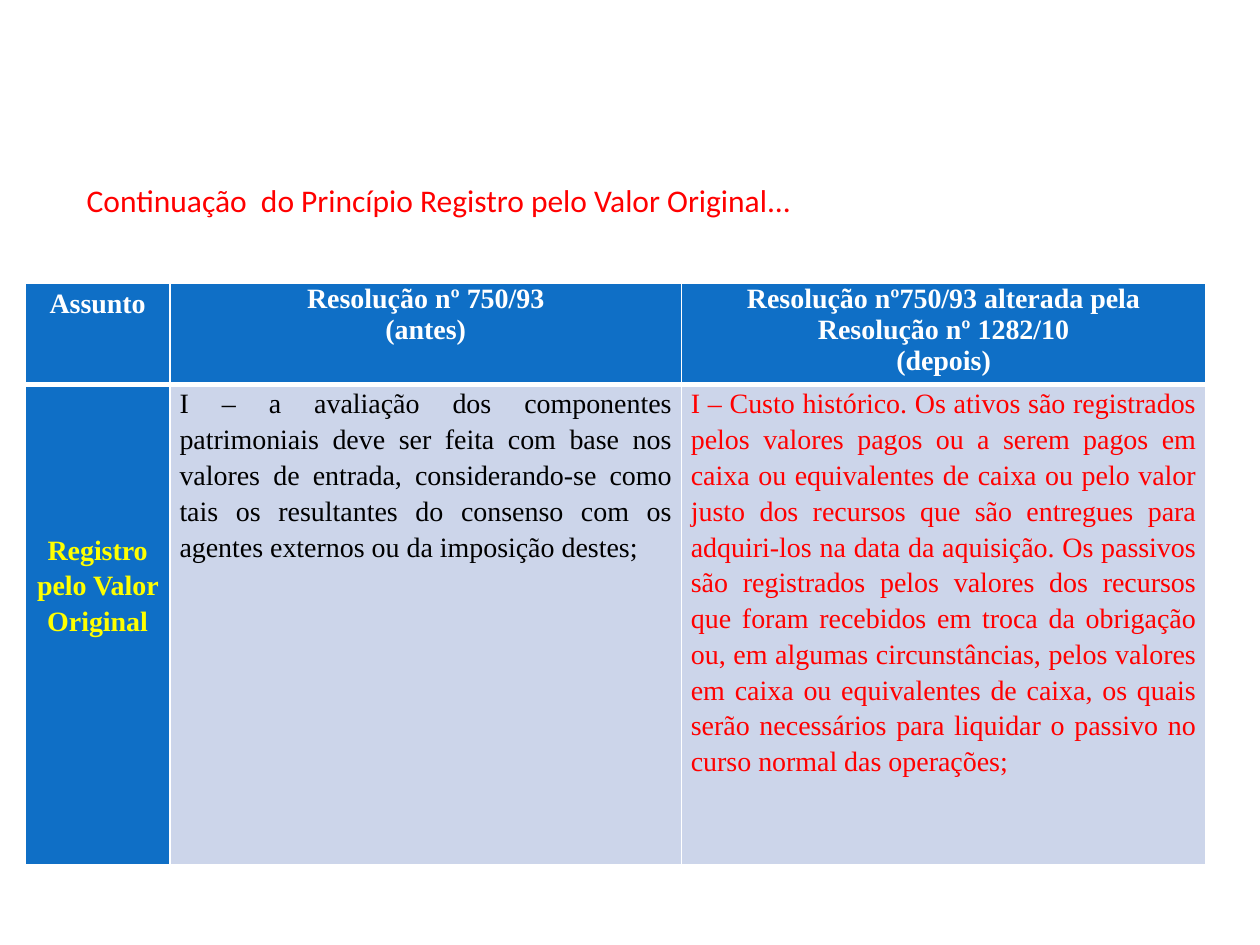
from dataclasses import dataclass

from lxml import etree
from pptx import Presentation
from pptx.dml.color import RGBColor
from pptx.enum.text import MSO_ANCHOR, MSO_AUTO_SIZE, PP_ALIGN
from pptx.oxml.ns import qn
from pptx.util import Pt

CENTER = PP_ALIGN.CENTER
JUSTIFY = PP_ALIGN.JUSTIFY
TOP = MSO_ANCHOR.TOP
MIDDLE = MSO_ANCHOR.MIDDLE
FIT_SHAPE = MSO_AUTO_SIZE.SHAPE_TO_FIT_TEXT


@dataclass(frozen=True)
class Theme:
    white: str = "FFFFFF"
    black: str = "000000"
    red: str = "FF0000"
    yellow: str = "FFFF00"
    blue: str = "0F6FC6"
    pale_blue: str = "CCD5EA"
    title_font: str = "Calibri"
    table_font: str = "Times New Roman"
    title_size: float = 18
    table_size: float = 16
    thin_line: float = 1
    thick_line: float = 3


THEME = Theme()


@dataclass(frozen=True)
class CellContent:
    lines: tuple[str, ...]
    color: str = THEME.white
    fill: str = THEME.blue
    bold: bool = True
    alignment: PP_ALIGN = CENTER
    line_spacing: float = 1.15
    anchor: MSO_ANCHOR = TOP
    bottom_margin: float = 0


COLUMN_WIDTHS = (82.8, 292.2, 299.6)
ROW_HEIGHTS = (57.6, 274.4)
TABLE_ROWS = (
    (
        CellContent(("Assunto",)),
        CellContent(("Resolução nº 750/93", "(antes)"), line_spacing=1),
        CellContent(
            ("Resolução nº750/93 alterada pela", "Resolução nº 1282/10", "(depois)"),
            line_spacing=1,
        ),
    ),
    (
        CellContent(
            ("Registro pelo Valor Original",),
            color=THEME.yellow, anchor=MIDDLE, bottom_margin=46,
        ),
        CellContent(
            ("I – a avaliação dos componentes patrimoniais deve ser feita com base nos "
             "valores de entrada, considerando-se como tais os resultantes do consenso "
             "com os agentes externos ou da imposição destes;",),
            color=THEME.black, fill=THEME.pale_blue, bold=False, alignment=JUSTIFY,
        ),
        CellContent(
            ("I – Custo histórico. Os ativos são registrados pelos valores pagos ou a "
             "serem pagos em caixa ou equivalentes de caixa ou pelo valor justo dos "
             "recursos que são entregues para adquiri-los na data da aquisição. Os "
             "passivos são registrados pelos valores dos recursos que foram recebidos em "
             "troca da obrigação ou, em algumas circunstâncias, pelos valores em caixa ou "
             "equivalentes de caixa, os quais serão necessários para liquidar o passivo "
             "no curso normal das operações;",),
            color=THEME.red, fill=THEME.pale_blue, bold=False, alignment=JUSTIFY,
        ),
    ),
)


def apply_format(target, values: dict) -> None:
    for name, value in values.items():
        setattr(target, name, value)


def format_font(font, name: str, size: float, color: str, bold: bool = False) -> None:
    apply_format(font, {"name": name, "size": Pt(size), "bold": bold})
    font.color.rgb = RGBColor.from_string(color)


def add_borders(cell, widths: dict[str, float]) -> None:
    """Add white lines; call before the fill, which must follow them in the XML."""
    properties = cell._tc.get_or_add_tcPr()
    for side, width in widths.items():
        line = etree.SubElement(properties, qn(f"a:ln{side}"), w=str(Pt(width)))
        fill = etree.SubElement(line, qn("a:solidFill"))
        etree.SubElement(fill, qn("a:srgbClr"), val=THEME.white)


def fill_cell(cell, content: CellContent, is_header: bool) -> None:
    thin, thick = THEME.thin_line, THEME.thick_line
    add_borders(cell, {
        "L": thin,
        "R": thin,
        "T": thin if is_header else thick,
        "B": thick if is_header else thin,
    })
    cell.fill.solid()
    cell.fill.fore_color.rgb = RGBColor.from_string(content.fill)
    apply_format(cell, {
        "margin_left": Pt(5.4),
        "margin_right": Pt(5.4),
        "margin_top": Pt(0),
        "margin_bottom": Pt(content.bottom_margin),
        "vertical_anchor": content.anchor,
    })
    cell.text_frame.text = "\n".join(content.lines)
    for paragraph in cell.text_frame.paragraphs:
        apply_format(paragraph, {
            "alignment": content.alignment,
            "line_spacing": content.line_spacing,
        })
        format_font(paragraph.runs[0].font, THEME.table_font, THEME.table_size,
                    content.color, content.bold)


def add_comparison_table(slide) -> None:
    table = slide.shapes.add_table(
        len(ROW_HEIGHTS), len(COLUMN_WIDTHS), Pt(14.4), Pt(162),
        Pt(sum(COLUMN_WIDTHS)), Pt(sum(ROW_HEIGHTS)),
    ).table
    for column, width in zip(table.columns, COLUMN_WIDTHS):
        column.width = Pt(width)
    for row_index, (row, height) in enumerate(zip(table.rows, ROW_HEIGHTS)):
        row.height = Pt(height)
        for cell, content in zip(row.cells, TABLE_ROWS[row_index]):
            fill_cell(cell, content, is_header=row_index == 0)


def add_title(slide) -> None:
    box = slide.shapes.add_textbox(Pt(42.5), Pt(100), Pt(453.6), Pt(29))
    apply_format(box.text_frame, {"word_wrap": True, "auto_size": FIT_SHAPE})
    run = box.text_frame.paragraphs[0].add_run()
    run.text = "Continuação  do Princípio Registro pelo Valor Original..."
    format_font(run.font, THEME.title_font, THEME.title_size, THEME.red)


def main() -> None:
    presentation = Presentation()
    apply_format(presentation, {"slide_width": Pt(720), "slide_height": Pt(540)})
    slide = presentation.slides.add_slide(presentation.slide_layouts[6])
    add_comparison_table(slide)
    add_title(slide)
    presentation.save("out.pptx")


if __name__ == "__main__":
    main()
